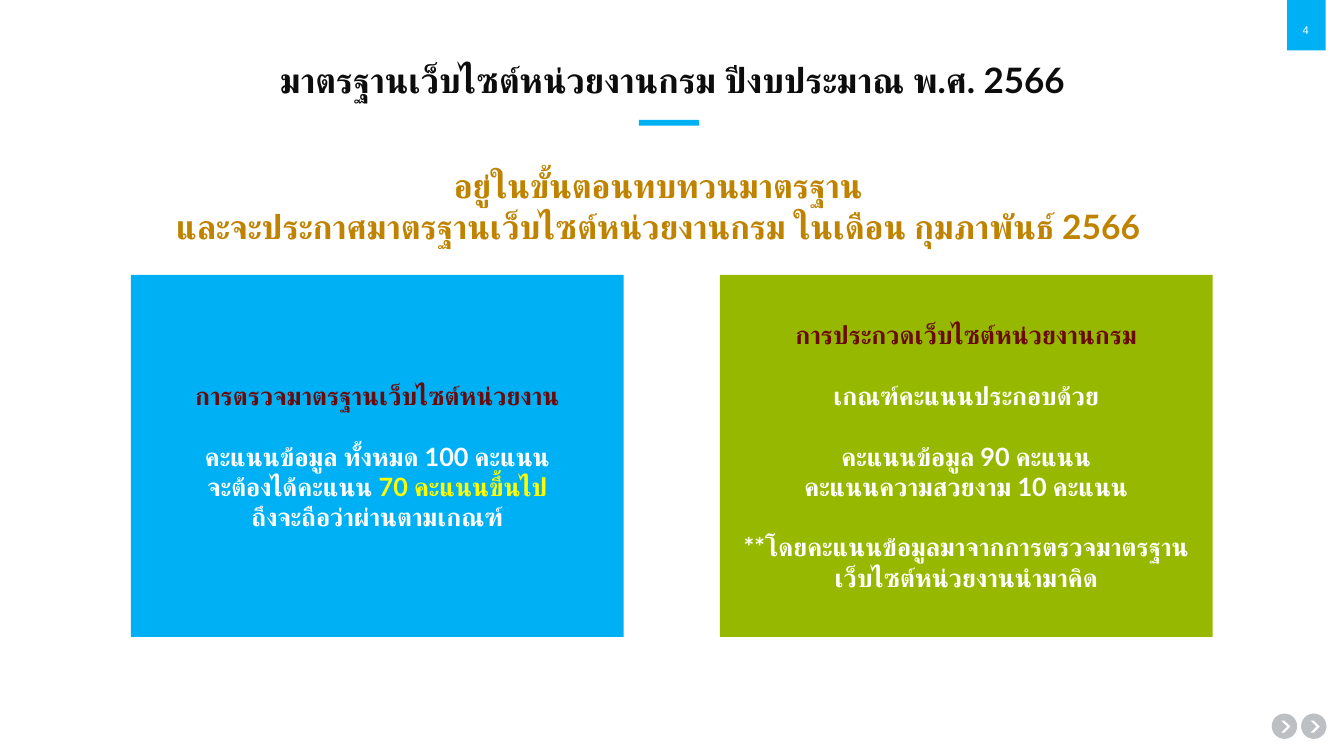
from dataclasses import dataclass

from lxml.etree import SubElement
from pptx import Presentation
from pptx.dml.color import RGBColor
from pptx.enum.shapes import MSO_SHAPE
from pptx.enum.text import MSO_ANCHOR, PP_ALIGN
from pptx.oxml.ns import qn
from pptx.shapes.autoshape import Shape
from pptx.slide import Slide
from pptx.text.text import TextFrame
from pptx.util import Cm, Pt


@dataclass(frozen=True)
class Theme:
    blue: str = "00B0F5"
    green: str = "96B900"
    white: str = "FFFFFF"
    page_number: str = "FEFEFE"
    gray: str = "7D8287"
    title: str = "0D0D0D"
    gold: str = "BF8300"
    maroon: str = "6B0A0A"
    yellow: str = "FFFF00"
    font: str = "Lato"
    number_font: str = "Arial"
    title_size: float = 25
    notice_size: float = 24
    body_size: float = 18
    number_size: float = 8
    group_gap: float = 21.7


THEME = Theme()


@dataclass(frozen=True)
class Box:
    left: float
    top: float
    width: float
    height: float

    def lengths(self) -> tuple[Cm, Cm, Cm, Cm]:
        return Cm(self.left), Cm(self.top), Cm(self.width), Cm(self.height)


@dataclass(frozen=True)
class Words:
    text: str
    color: str


@dataclass(frozen=True)
class Line:
    runs: tuple[Words, ...]
    starts_group: bool = False


@dataclass(frozen=True)
class Panel:
    left: float
    fill: str
    lines: tuple[Line, ...]


def line(text: str, color: str = THEME.white, starts_group: bool = False) -> Line:
    return Line((Words(text, color),), starts_group)


PANELS = (
    Panel(3.3, THEME.blue, (
        line("การตรวจมาตรฐานเว็บไซต์หน่วยงาน", THEME.maroon),
        line("คะแนนข้อมูล ทั้งหมด 100 คะแนน", starts_group=True),
        Line((Words("จะต้องได้คะแนน ", THEME.white),
              Words("70 คะแนนขึ้นไป", THEME.yellow))),
        line("ถึงจะถือว่าผ่านตามเกณฑ์"),
    )),
    Panel(18.14, THEME.green, (
        line("การประกวดเว็บไซต์หน่วยงานกรม", THEME.maroon),
        line("เกณฑ์คะแนนประกอบด้วย", starts_group=True),
        line("คะแนนข้อมูล 90 คะแนน", starts_group=True),
        line("คะแนนความสวยงาม 10 คะแนน"),
        line("**โดยคะแนนข้อมูลมาจากการตรวจมาตรฐานเว็บไซต์หน่วยงานนำมาคิด",
             starts_group=True),
    )),
)
NOTICE = (
    line("อยู่ในขั้นตอนทบทวนมาตรฐาน", THEME.gold),
    line("และจะประกาศมาตรฐานเว็บไซต์หน่วยงานกรม ในเดือน กุมภาพันธ์ 2566", THEME.gold),
)
TITLE = line("มาตรฐานเว็บไซต์หน่วยงานกรม ปีงบประมาณ พ.ศ. 2566", THEME.title)
BUTTON_LEFTS = (32.79, 32.05)


def write_lines(frame: TextFrame, lines: tuple[Line, ...], size: float,
                font: str = THEME.font, bold: bool = True) -> None:
    for index, item in enumerate(lines):
        paragraph = frame.add_paragraph() if index else frame.paragraphs[0]
        paragraph.alignment = PP_ALIGN.CENTER
        if item.starts_group:
            paragraph.space_before = Pt(THEME.group_gap)
        for words in item.runs:
            run = paragraph.add_run()
            run.text = words.text
            run.font.size = Pt(size)
            run.font.name = font
            run.font.bold = bold
            run.font.color.rgb = RGBColor.from_string(words.color)
            # Thai letters take the complex-script font
            SubElement(run.font._element, qn("a:cs"), typeface=font)


def add_filled(slide: Slide, kind: MSO_SHAPE, box: Box, color: str) -> Shape:
    shape = slide.shapes.add_shape(kind, *box.lengths())
    shape.shadow.inherit = False
    shape.fill.solid()
    shape.fill.fore_color.rgb = RGBColor.from_string(color)
    shape.line.fill.background()
    return shape


def add_page_number(slide: Slide) -> None:
    add_filled(slide, MSO_SHAPE.RECTANGLE, Box(32.44, -0.08, 0.97, 1.35), THEME.blue)
    number = slide.shapes.add_textbox(*Box(32.31, 0.48, 1.19, 0.53).lengths())
    frame = number.text_frame
    frame.word_wrap = True
    frame.vertical_anchor = MSO_ANCHOR.MIDDLE
    write_lines(frame, (line("4", THEME.page_number),), THEME.number_size,
                THEME.number_font, bold=False)


def add_button(slide: Slide, left: float) -> None:
    top = 17.98
    circle = add_filled(slide, MSO_SHAPE.OVAL, Box(left, top, 0.64, 0.64), THEME.gray)
    color = circle.fill._xPr.find(qn("a:solidFill"))[0]
    SubElement(color, qn("a:alpha"), val="50000")
    chevron = add_filled(slide, MSO_SHAPE.CHEVRON,
                         Box(left + 0.24, top + 0.18, 0.23, 0.3), THEME.white)
    chevron.adjustments[0] = 0.66


def add_title(slide: Slide) -> None:
    title = slide.shapes.title
    title.left, title.top, title.width, title.height = Box(2.34, 1.37, 29.21, 1.4).lengths()
    frame = title.text_frame
    frame.vertical_anchor = MSO_ANCHOR.MIDDLE
    write_lines(frame, (TITLE,), THEME.title_size)
    frame.paragraphs[0].line_spacing = 0.9
    add_filled(slide, MSO_SHAPE.RECTANGLE, Box(16.1, 3.02, 1.52, 0.15), THEME.blue)


def add_notice(slide: Slide) -> None:
    notice = slide.shapes.add_textbox(*Box(3.81, 4.04, 25.55, 2.31).lengths())
    notice.text_frame.word_wrap = False
    write_lines(notice.text_frame, NOTICE, THEME.notice_size)


def add_panel(slide: Slide, panel: Panel) -> None:
    shape = add_filled(slide, MSO_SHAPE.RECTANGLE,
                       Box(panel.left, 6.93, 12.42, 9.12), panel.fill)
    frame = shape.text_frame
    frame.word_wrap = True
    frame.vertical_anchor = MSO_ANCHOR.MIDDLE
    write_lines(frame, panel.lines, THEME.body_size)


def main() -> None:
    presentation = Presentation()
    presentation.slide_width = Cm(33.87)
    presentation.slide_height = Cm(19.05)
    slide = presentation.slides.add_slide(presentation.slide_layouts[5])
    add_page_number(slide)
    for left in BUTTON_LEFTS:
        add_button(slide, left)
    add_title(slide)
    add_notice(slide)
    for panel in PANELS:
        add_panel(slide, panel)
    presentation.save("out.pptx")


if __name__ == "__main__":
    main()
